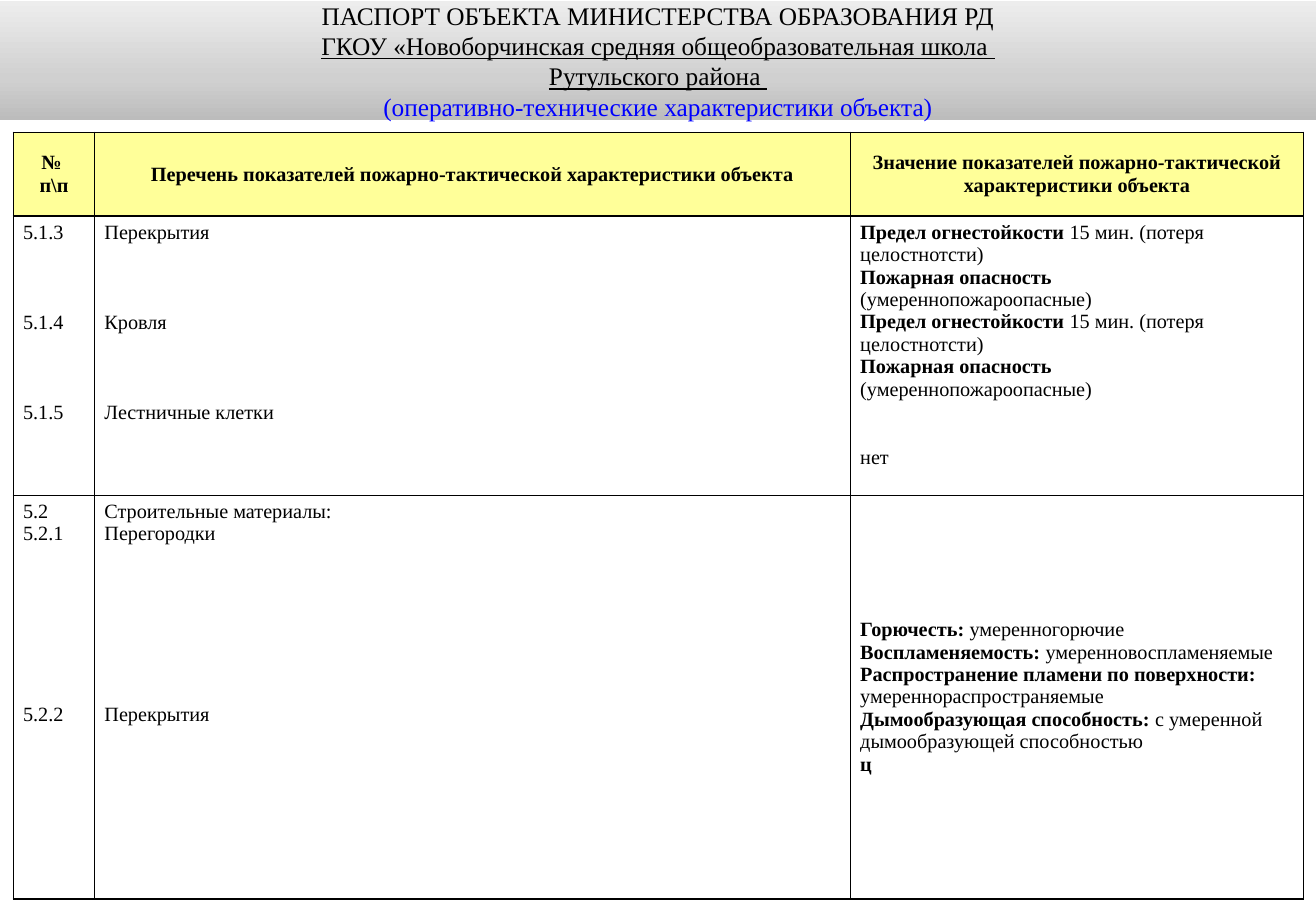
from copy import deepcopy

from lxml import etree
from pptx import Presentation
from pptx.dml.color import RGBColor
from pptx.enum.text import MSO_ANCHOR, MSO_AUTO_SIZE, PP_ALIGN
from pptx.oxml.ns import qn
from pptx.util import Inches, Pt

BLACK = RGBColor(0x00, 0x00, 0x00)
BLUE = RGBColor(0x00, 0x00, 0xFF)
WHITE = RGBColor(0xFF, 0xFF, 0xFF)
YELLOW = RGBColor(0xFF, 0xFF, 0x99)
BANNER_STOPS = [(0, RGBColor(0xBC, 0xBC, 0xBC)),
                (0.35, RGBColor(0xD0, 0xD0, 0xD0)),
                (1, RGBColor(0xED, 0xED, 0xED))]
CENTER, LEFT = PP_ALIGN.CENTER, PP_ALIGN.LEFT
TOP, MIDDLE = MSO_ANCHOR.TOP, MSO_ANCHOR.MIDDLE
NO_AUTOFIT = MSO_AUTO_SIZE.NONE
FONT = "Times New Roman"
LINE = 13.4  # height of one table text line, points

# Title lines: text, colour, underlined
TITLE = [
    ("ПАСПОРТ ОБЪЕКТА МИНИСТЕРСТВА ОБРАЗОВАНИЯ РД", BLACK, False),
    ("ГКОУ «Новоборчинская средняя общеобразовательная школа ", BLACK, True),
    ("Рутульского района ", BLACK, True),
    ("(оперативно-технические характеристики объекта)", BLUE, False),
]

# Cell paragraphs: lines of space above, bold part, regular part
HEADER = [
    [(0, "№ ", ""), (0, "п\\п", "")],
    [(0, "Перечень показателей пожарно-тактической характеристики объекта", "")],
    [(0, "Значение показателей пожарно-тактической характеристики объекта", "")],
]
FIRE_LIMITS = [
    (0, "Предел огнестойкости ", "15 мин. (потеря целостнотсти)"),
    (0, "Пожарная опасность", ""),
    (0, "", "(умереннопожароопасные)"),
]
STRUCTURES = [
    [(0, "", "5.1.3"), (3, "", "5.1.4"), (3, "", "5.1.5")],
    [(0, "", "Перекрытия"), (3, "", "Кровля"), (3, "", "Лестничные клетки")],
    FIRE_LIMITS * 2 + [(2, "", "нет")],
]
MATERIALS = [
    [(0, "", "5.2"), (0, "", "5.2.1"), (7, "", "5.2.2")],
    [(0, "", "Строительные материалы:"), (0, "", "Перегородки"),
     (7, "", "Перекрытия")],
    [(0, "Горючесть: ", "умеренногорючие"),
     (0, "Воспламеняемость: ", "умеренновоспламеняемые"),
     (0, "Распространение пламени по поверхности:", ""),
     (0, "", "умереннораспространяемые"),
     (0, "Дымообразующая способность: ",
      "с умеренной дымообразующей способностью"),
     (0, "ц", "")],
]
COLUMNS = [0.67, 6.22, 3.73]
ROWS = [(0.69, HEADER), (2.3, STRUCTURES), (3.32, MATERIALS)]


def set_font(font, size, color):
    font.name, font.size, font.color.rgb = FONT, Pt(size), color


def add_banner(s, x, y, w, h):
    title = s.shapes.title
    title.left, title.top, title.width, title.height = map(Inches, (x, y, w, h))
    # Three-stop gradient, dark at the bottom
    title.fill.gradient()
    title.fill.gradient_angle = 90
    stops = title.element.spPr.find(".//" + qn("a:gsLst"))
    stops.insert(1, deepcopy(stops[0]))
    for stop, (position, color) in zip(title.fill.gradient_stops, BANNER_STOPS):
        stop.position, stop.color.rgb = position, color
    # Title lines
    tf = title.text_frame
    tf.word_wrap, tf.auto_size, tf.vertical_anchor = True, NO_AUTOFIT, MIDDLE
    tf.text = "\n".join(text for text, _, _ in TITLE)
    for p, (_, color, underline) in zip(tf.paragraphs, TITLE):
        p.alignment = CENTER
        set_font(p.font, 15, color)
        p.font.underline = underline


def add_borders(cell):
    tc_pr = cell._tc.get_or_add_tcPr()
    for side in ("a:lnL", "a:lnR", "a:lnT", "a:lnB"):
        ln = etree.SubElement(tc_pr, qn(side), w=str(Pt(1)))
        fill = etree.SubElement(ln, qn("a:solidFill"))
        etree.SubElement(fill, qn("a:srgbClr"), val=str(BLACK))


def fill_cell(cell, paragraphs, color, align, anchor):
    add_borders(cell)
    cell.fill.solid()
    cell.fill.fore_color.rgb = color
    cell.vertical_anchor = anchor
    cell.margin_left = cell.margin_right = Inches(0.08)
    cell.margin_top = cell.margin_bottom = Inches(0.04)
    tf = cell.text_frame
    for i, (gap, bold, regular) in enumerate(paragraphs):
        p = tf.add_paragraph() if i else tf.paragraphs[0]
        p.alignment = align
        p.space_before = Pt(gap * LINE)
        set_font(p.font, 12, BLACK)
        for text, is_bold in ((bold, True), (regular, False)):
            if text:
                r = p.add_run()
                r.text, r.font.bold = text, is_bold


def add_passport_table(s, x, y, w, h):
    table = s.shapes.add_table(len(ROWS), len(COLUMNS),
                               *map(Inches, (x, y, w, h))).table
    table.first_row = table.horz_banding = False
    for column, width in zip(table.columns, COLUMNS):
        column.width = Inches(width)
    for i, (height, cells) in enumerate(ROWS):
        table.rows[i].height = Inches(height)
        for j, paragraphs in enumerate(cells):
            header = cells is HEADER
            centred = header or (cells is MATERIALS and j == 2)
            fill_cell(table.cell(i, j), paragraphs,
                      YELLOW if header else WHITE,
                      CENTER if header else LEFT,
                      MIDDLE if centred else TOP)


def main():
    prs = Presentation()
    prs.slide_width, prs.slide_height = Inches(10.83), Inches(7.5)
    s = prs.slides.add_slide(prs.slide_layouts[5])
    add_banner(s, 0, 0.01, 10.83, 0.98)
    add_passport_table(s, 0.11, 1.09, 10.62, 6.31)
    prs.save("out.pptx")


if __name__ == "__main__":
    main()
